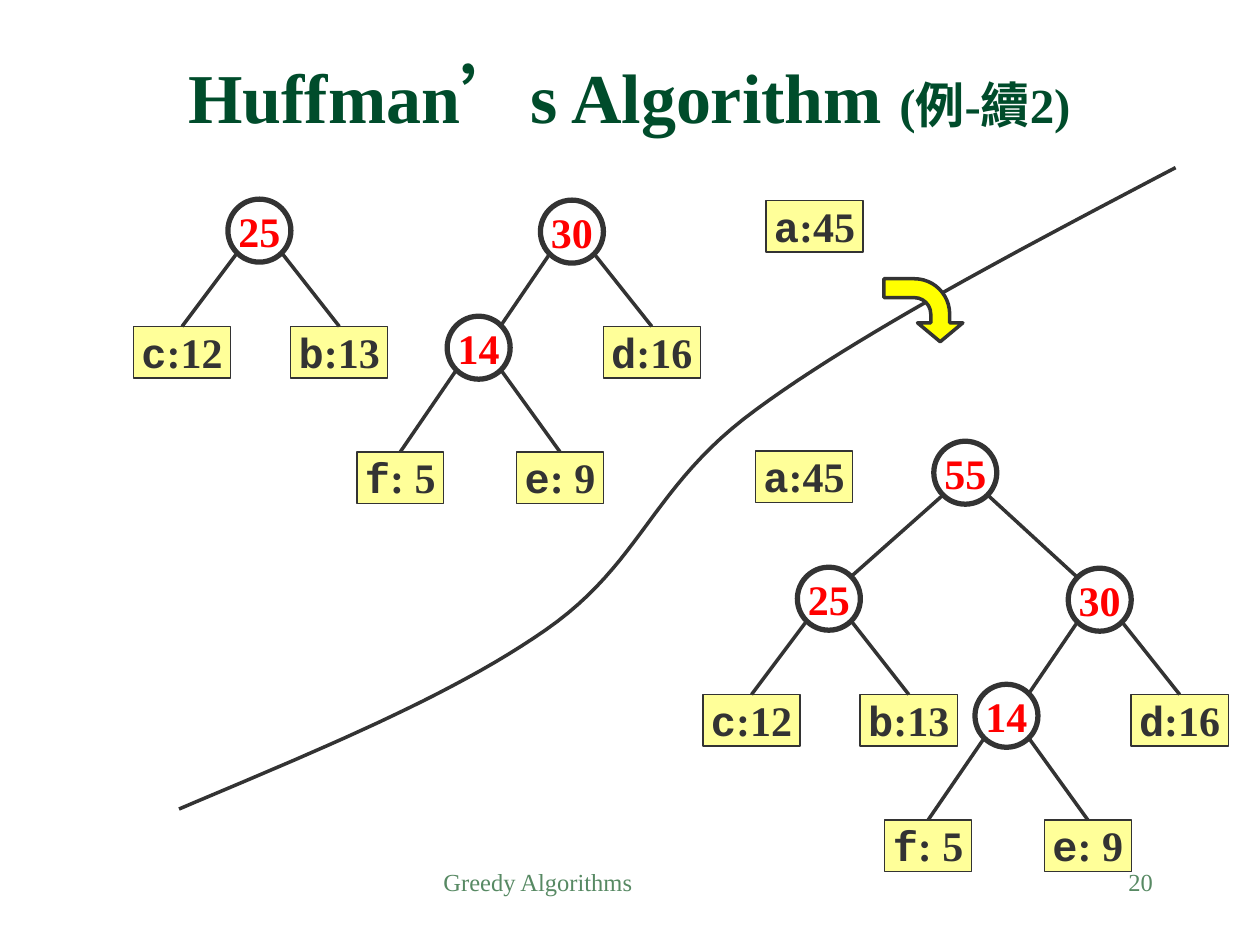
from dataclasses import dataclass

from lxml.etree import SubElement
from pptx import Presentation
from pptx.dml.color import RGBColor
from pptx.enum.shapes import MSO_CONNECTOR, MSO_SHAPE
from pptx.enum.text import MSO_ANCHOR, MSO_AUTO_SIZE, PP_ALIGN
from pptx.oxml.ns import qn
from pptx.util import Cm, Pt


@dataclass(frozen=True)
class Theme:
    title: RGBColor = RGBColor(0x00, 0x4C, 0x2B)
    footer: RGBColor = RGBColor(0x57, 0x89, 0x63)
    ink: RGBColor = RGBColor(0x33, 0x33, 0x33)
    weight: RGBColor = RGBColor(0xFF, 0x00, 0x00)
    circle: RGBColor = RGBColor(0xFF, 0xFF, 0xFF)
    leaf: RGBColor = RGBColor(0xFF, 0xFF, 0x99)
    arrow: RGBColor = RGBColor(0xFF, 0xFF, 0x00)
    serif: str = "Times New Roman"
    mono: str = "Courier New"
    title_size: Pt = Pt(40)
    subtitle_size: Pt = Pt(28)
    node_size: Pt = Pt(24)
    footer_size: Pt = Pt(14)


@dataclass(frozen=True)
class Branch:
    """An inner node; each child is (dx, dy, Branch or leaf text) in cm.

    The offset runs from this centre to a child's centre, or to a leaf's top middle.
    """
    weight: str
    children: tuple


THEME = Theme()
RADIUS = 0.635
DIAGONAL = 0.45
LEAF_HEIGHT = 1.04

TREE_14 = Branch("14", ((-1.58, 2.1, "f: 5"), (1.64, 2.1, "e: 9")))
TREE_25 = Branch("25", ((-1.56, 1.93, "c:12"), (1.61, 1.93, "b:13")))
TREE_30 = Branch("30", ((-1.88, 2.34, TREE_14), (1.61, 1.91, "d:16")))
TREE_55 = Branch("55", ((-2.75, 2.54, TREE_25), (2.71, 2.56, TREE_30)))

DIVIDER = [
    (3.61, 16.31), (6.32, 15.16), (9.07, 14.05), (11, 12.7), (12.95, 11.35),
    (13.13, 9.8), (15.24, 8.26), (17.35, 6.71), (20.52, 5.05), (23.7, 3.38),
]


def style_run(run, size, color, font=THEME.serif, bold=True):
    run.font.size, run.font.name, run.font.bold = size, font, bold
    run.font.color.rgb = color


def style_shape(shape, fill, line_width):
    shape.shadow.inherit = False
    if fill is None:
        shape.fill.background()
    else:
        shape.fill.solid()
        shape.fill.fore_color.rgb = fill
    shape.line.color.rgb = THEME.ink
    shape.line.width = Pt(line_width)


def set_margins(frame, side):
    frame.margin_left = frame.margin_right = Cm(side)
    frame.margin_top = frame.margin_bottom = 0


def add_leaf(shapes, center, top, label):
    width = 1.75 if " " in label else 1.96
    leaf = shapes.add_shape(MSO_SHAPE.RECTANGLE, Cm(center - width / 2), Cm(top),
                            Cm(width), Cm(LEAF_HEIGHT))
    style_shape(leaf, THEME.leaf, 0.75)
    frame = leaf.text_frame
    set_margins(frame, 0.15)
    frame.word_wrap = False
    frame.auto_size = MSO_AUTO_SIZE.SHAPE_TO_FIT_TEXT
    frame.vertical_anchor = MSO_ANCHOR.TOP
    paragraph = frame.paragraphs[0]
    paragraph.alignment = PP_ALIGN.CENTER
    for text, font in ((label[0], THEME.mono), (label[1:], THEME.serif)):
        run = paragraph.add_run()
        run.text = text
        style_run(run, THEME.node_size, THEME.ink, font)
    return leaf


def add_circle(shapes, x, y, weight):
    circle = shapes.add_shape(MSO_SHAPE.OVAL, Cm(x - RADIUS), Cm(y - RADIUS),
                              Cm(2 * RADIUS), Cm(2 * RADIUS))
    style_shape(circle, THEME.circle, 3)
    frame = circle.text_frame
    set_margins(frame, 0)
    frame.word_wrap = False
    frame.vertical_anchor = MSO_ANCHOR.MIDDLE
    frame.text = weight
    frame.paragraphs[0].alignment = PP_ALIGN.CENTER
    style_run(frame.paragraphs[0].runs[0], THEME.node_size, THEME.weight)


def add_edge(shapes, x1, y1, x2, y2):
    edge = shapes.add_connector(MSO_CONNECTOR.STRAIGHT, Cm(x1), Cm(y1), Cm(x2), Cm(y2))
    edge.line.color.rgb = THEME.ink
    edge.line.width = Pt(2)
    SubElement(edge._element.spPr, qn("a:effectLst"))
    return edge


def add_tree(shapes, x, y, branch):
    """Draw a branch centred at (x, y) and everything below it."""
    add_circle(shapes, x, y, branch.weight)
    for dx, dy, child in branch.children:
        toward = DIAGONAL if dx > 0 else -DIAGONAL
        start = (x + toward, y + DIAGONAL)
        if isinstance(child, Branch):
            add_tree(shapes, x + dx, y + dy, child)
            add_edge(shapes, *start, x + dx - toward, y + dy - DIAGONAL)
        else:
            leaf = add_leaf(shapes, x + dx, y + dy, child)
            add_edge(shapes, *start, x + dx, y + dy).end_connect(leaf, 0)


def bezier_points(controls, steps=24):
    """Points along a chain of cubic curves that share their end points."""
    points = [controls[0]]
    for first in range(0, len(controls) - 1, 3):
        curve = controls[first:first + 4]
        for step in range(1, steps + 1):
            t = step / steps
            weights = ((1 - t) ** 3, 3 * t * (1 - t) ** 2, 3 * t * t * (1 - t), t ** 3)
            points.append(tuple(sum(w * p[axis] for w, p in zip(weights, curve))
                                for axis in (0, 1)))
    return points


def add_divider(shapes):
    points = [(Cm(x), Cm(y)) for x, y in bezier_points(DIVIDER)]
    builder = shapes.build_freeform(*points[0])
    builder.add_line_segments(points[1:], close=False)
    style_shape(builder.convert_to_shape(), None, 2)


def add_step_arrow(shapes):
    arrow = shapes.add_shape(MSO_SHAPE.BENT_ARROW, Cm(17.98), Cm(5.46), Cm(1.27), Cm(1.59))
    arrow.rotation = 90
    for index, value in enumerate((0.3, 0.36, 0.3, 0.56)):
        arrow.adjustments[index] = value
    style_shape(arrow, THEME.arrow, 2)


def add_title(shapes):
    frame = shapes.add_textbox(Cm(1.07), Cm(0.2), Cm(23.24), Cm(2.59)).text_frame
    frame.word_wrap = True
    frame.vertical_anchor = MSO_ANCHOR.MIDDLE
    paragraph = frame.paragraphs[0]
    paragraph.alignment = PP_ALIGN.CENTER
    paragraph.line_spacing = 1.5
    for text, size in (("Huffman’s Algorithm ", THEME.title_size),
                       ("(例-續2)", THEME.subtitle_size)):
        run = paragraph.add_run()
        run.text = text
        style_run(run, size, THEME.title)
        run._r.get_or_add_rPr().set("lang", "zh-TW")


def add_footer(shapes, left, width, text, alignment):
    frame = shapes.add_textbox(Cm(left), Cm(17.35), Cm(width), Cm(1.27)).text_frame
    frame.word_wrap = True
    frame.text = text
    frame.paragraphs[0].alignment = alignment
    style_run(frame.paragraphs[0].runs[0], THEME.footer_size, THEME.footer, bold=False)


def main():
    presentation = Presentation()
    presentation.slide_width, presentation.slide_height = Cm(25.4), Cm(19.05)
    shapes = presentation.slides.add_slide(presentation.slide_layouts[6]).shapes

    add_footer(shapes, 8.69, 8.05, "Greedy Algorithms", PP_ALIGN.LEFT)
    add_footer(shapes, 18.21, 5.28, "20", PP_ALIGN.RIGHT)
    add_title(shapes)

    add_tree(shapes, 11.53, 4.67, TREE_30)
    add_tree(shapes, 5.23, 4.65, TREE_25)
    add_leaf(shapes, 16.42, 4.04, "a:45")

    merged = shapes.add_group_shape().shapes
    add_leaf(merged, 16.21, 9.09, "a:45")
    add_tree(merged, 19.46, 9.53, TREE_55)

    add_divider(shapes)
    add_step_arrow(shapes)
    presentation.save("out.pptx")


if __name__ == "__main__":
    main()
